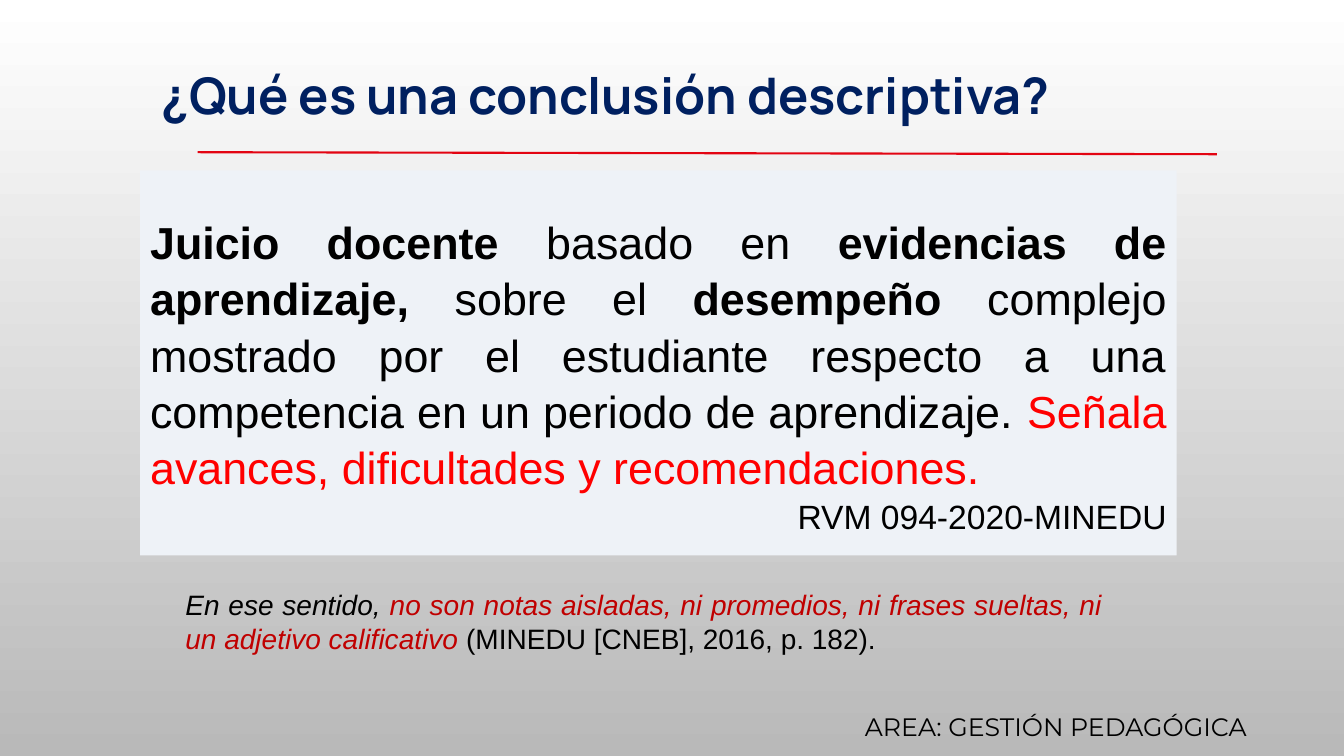
from dataclasses import dataclass

from lxml import etree
from pptx import Presentation
from pptx.dml.color import RGBColor
from pptx.enum.shapes import MSO_CONNECTOR, MSO_SHAPE
from pptx.enum.text import MSO_ANCHOR, PP_ALIGN
from pptx.oxml.ns import qn
from pptx.util import Inches, Pt

STRAIGHT = MSO_CONNECTOR.STRAIGHT
RECTANGLE = MSO_SHAPE.RECTANGLE
TOP = MSO_ANCHOR.TOP
LEFT, RIGHT, JUSTIFY = PP_ALIGN.LEFT, PP_ALIGN.RIGHT, PP_ALIGN.JUSTIFY


@dataclass(frozen=True)
class Theme:
    white: str = "FFFFFF"
    gray: str = "B9B9B9"
    black: str = "000000"
    navy: str = "002060"
    rule: str = "E30412"
    red: str = "FF0000"
    dark_red: str = "C00000"
    panel: str = "EEF2F7"
    title_font: str = "Manrope"
    body_font: str = "Arial"
    footer_font: str = "Montserrat"
    title: int = 36
    definition: int = 32
    source: int = 24
    note: int = 20
    footer: int = 18


T = Theme()


def rgb(value):
    return RGBColor.from_string(value)


def set_background(s):
    fill = s.background.fill
    fill.gradient()
    fill.gradient_angle = 270
    for stop, color, position in zip(fill.gradient_stops, (T.white, T.gray), (0, 1)):
        stop.color.rgb = rgb(color)
        stop.position = position


def add_rule(s, x1, y1, x2, y2):
    line = s.shapes.add_connector(STRAIGHT, Inches(x1), Inches(y1), Inches(x2), Inches(y2))
    line.line.color.rgb = rgb(T.rule)
    line.line.width = Pt(1.5)
    etree.SubElement(line._element.spPr, qn("a:effectLst"))


def add_run(p, text, font, size, color=T.black, bold=False, italic=False):
    r = p.add_run()
    r.text = text
    r.font.name = font
    r.font.size = Pt(size)
    r.font.color.rgb = rgb(color)
    r.font.bold = bold
    r.font.italic = italic


def format_paragraph(p, align, spacing=1.0):
    p.alignment = align
    p.line_spacing = spacing
    return p


def add_text(s, left, top, width, height, align=LEFT, spacing=1.0):
    box = s.shapes.add_textbox(Inches(left), Inches(top), Inches(width), Inches(height))
    tf = box.text_frame
    tf.word_wrap = True
    return format_paragraph(tf.paragraphs[0], align, spacing)


def add_panel(s, left, top, width, height, inset_top):
    sp = s.shapes.add_shape(RECTANGLE, Inches(left), Inches(top), Inches(width), Inches(height))
    sp.shadow.inherit = False
    sp.fill.solid()
    sp.fill.fore_color.rgb = rgb(T.panel)
    sp.line.fill.background()
    tf = sp.text_frame
    tf.word_wrap = True
    tf.vertical_anchor = TOP
    tf.margin_top = Inches(inset_top)
    return tf


def add_definition(s):
    tf = add_panel(s, 1.39, 1.69, 10.28, 3.82, inset_top=0.41)
    p = format_paragraph(tf.paragraphs[0], JUSTIFY, 1.05)
    for text, color, bold in (
        ("Juicio docente", T.black, True),
        (" basado en ", T.black, False),
        ("evidencias de aprendizaje,", T.black, True),
        (" sobre el ", T.black, False),
        ("desempeño", T.black, True),
        (" complejo mostrado por el estudiante respecto a una competencia "
         "en un periodo de aprendizaje. ", T.black, False),
        ("Señala avances, dificultades y recomendaciones.", T.red, False),
    ):
        add_run(p, text, T.body_font, T.definition, color, bold)
    p = format_paragraph(tf.add_paragraph(), RIGHT, 1.05)
    add_run(p, "RVM 094-2020-MINEDU", T.body_font, T.source)


def add_note(s):
    p = add_text(s, 1.74, 5.78, 9.29, 0.77, JUSTIFY)
    for text, color, italic in (
        ("En ese sentido, ", T.black, True),
        ("no son notas aisladas, ni promedios, ni frases sueltas, "
         "ni un adjetivo calificativo ", T.dark_red, True),
        ("(MINEDU [CNEB], 2016, p. 182).", T.black, False),
    ):
        add_run(p, text, T.body_font, T.note, color, italic=italic)


def main():
    prs = Presentation()
    prs.slide_width, prs.slide_height = Inches(13.33), Inches(7.5)
    s = prs.slides.add_slide(prs.slide_layouts[6])
    set_background(s)
    add_rule(s, 1.96, 1.51, 12.07, 1.53)
    p = add_text(s, 8.48, 7.01, 4.39, 0.4)
    add_run(p, "AREA: GESTIÓN PEDAGÓGICA", T.footer_font, T.footer)
    add_definition(s)
    add_note(s)
    p = add_text(s, 1.5, 0.55, 9.7, 0.73, spacing=1.07)
    add_run(p, "¿Qué es una conclusión descriptiva?", T.title_font, T.title, T.navy, bold=True)
    prs.save("out.pptx")


if __name__ == "__main__":
    main()
